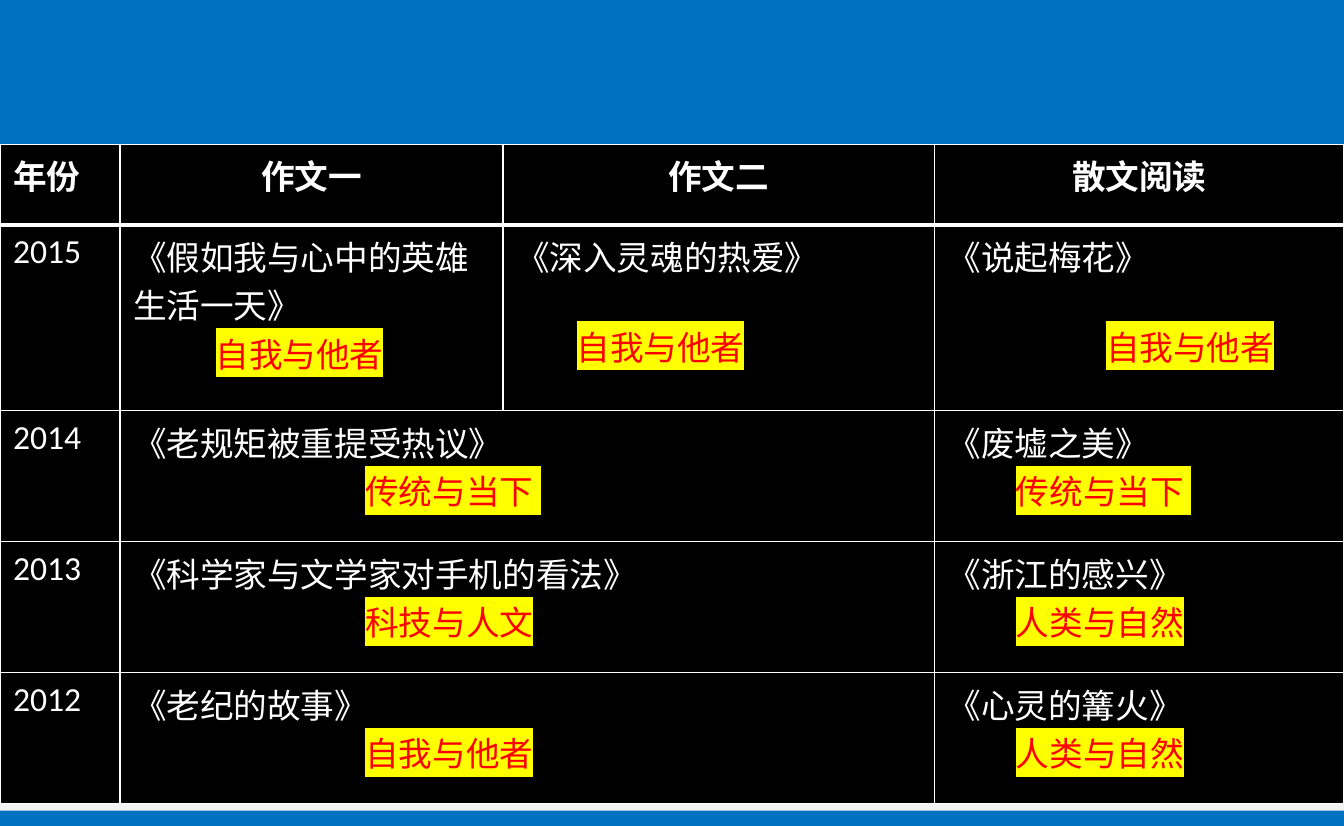
from dataclasses import dataclass

from lxml import etree
from pptx import Presentation
from pptx import util as u
from pptx.dml.color import RGBColor
from pptx.enum import shapes, text
from pptx.oxml.ns import qn

EMU_PER_PX = 9144  # 100 px to the inch
SLIDE_WIDTH, SLIDE_HEIGHT = 1221, 750
CJK, LATIN = "Noto Sans CJK SC", "Calibri"
WHITE, BLACK, RED, YELLOW = "FFFFFF", "000000", "FF0000", "FFFF00"
BLUE, PALE = "0070C0", "F2F2F2"


@dataclass
class Band:
    top: int
    height: int


@dataclass
class Entry:
    title: str
    theme: str
    indent: int
    gap: int = 0  # points above the theme
    span: int = 1


@dataclass
class YearRow:
    year: str
    entries: list[Entry]


BANDS = [Band(0, 131), Band(736, 14)]
TABLE_TOP = 131
COLUMN_WIDTHS = [109, 348, 392, 372]
ROW_HEIGHTS = [73, 169, 119, 119, 119]
HEADINGS = ["年份", "作文一", "作文二", "散文阅读"]
YEAR_ROWS = [
    YearRow("2015", [Entry("《假如我与心中的英雄生活一天》", "自我与他者", 75),
                     Entry("《深入灵魂的热爱》", "自我与他者", 55, gap=27),
                     Entry("《说起梅花》", "自我与他者", 144, gap=27)]),
    YearRow("2014", [Entry("《老规矩被重提受热议》", "传统与当下 ", 211, span=2),
                     Entry("《废墟之美》", "传统与当下 ", 62)]),
    YearRow("2013", [Entry("《科学家与文学家对手机的看法》", "科技与人文", 211, span=2),
                     Entry("《浙江的感兴》", "人类与自然", 62)]),
    YearRow("2012", [Entry("《老纪的故事》", "自我与他者", 211, span=2),
                     Entry("《心灵的篝火》", "人类与自然", 62)]),
]


def px(length: int) -> u.Emu:
    return u.Emu(length * EMU_PER_PX)


def color(value: str) -> RGBColor:
    return RGBColor.from_string(value)


def write(paragraph, content: str, *, font: str = CJK, fill: str = WHITE,
          bold: bool = False, centered: bool = False, indent: int = 0,
          gap: int = 0, highlight: str = "") -> None:
    if centered:
        paragraph.alignment = text.PP_ALIGN.CENTER
    if indent:
        properties = paragraph._p.get_or_add_pPr()
        properties.set("marL", str(px(indent)))
        properties.set("indent", "0")
    if gap:
        paragraph.space_before = u.Pt(gap)
    run = paragraph.add_run()
    run.text = content
    run.font.size = u.Pt(22)
    run.font.bold = bold
    run.font.name = font
    run.font.color.rgb = color(fill)
    properties = run._r.get_or_add_rPr()
    east_asian = etree.Element(qn("a:ea"), typeface=CJK)
    properties.find(qn("a:latin")).addnext(east_asian)
    if highlight:
        mark = etree.Element(qn("a:highlight"))
        etree.SubElement(mark, qn("a:srgbClr"), val=highlight)
        properties.find(qn("a:solidFill")).addnext(mark)


def format_cell(cell, top: int = 1, bottom: int = 1) -> None:
    cell.margin_left = cell.margin_right = px(12)
    cell.margin_top = cell.margin_bottom = px(6)
    cell.fill.solid()
    cell.fill.fore_color.rgb = color(BLACK)
    # Borders come before the fill in the cell properties
    widths = {"a:lnL": 1, "a:lnR": 1, "a:lnT": top, "a:lnB": bottom}
    for position, (side, width) in enumerate(widths.items()):
        line = etree.Element(qn(side), w=str(u.Pt(width)))
        solid = etree.SubElement(line, qn("a:solidFill"))
        etree.SubElement(solid, qn("a:srgbClr"), val=WHITE)
        cell._tc.get_or_add_tcPr().insert(position, line)


def add_band(slide, band: Band) -> None:
    shape = slide.shapes.add_shape(shapes.MSO_SHAPE.RECTANGLE, 0, px(band.top),
                                   px(SLIDE_WIDTH), px(band.height))
    shape.shadow.inherit = False
    shape.fill.solid()
    shape.fill.fore_color.rgb = color(BLUE)
    shape.line.fill.background()


def add_year_row(table, row: int, year_row: YearRow) -> None:
    write(table.cell(row, 0).text_frame.paragraphs[0], year_row.year, font=LATIN)
    column = 1
    for entry in year_row.entries:
        cell = table.cell(row, column)
        if entry.span > 1:
            cell.merge(table.cell(row, column + entry.span - 1))
        write(cell.text_frame.paragraphs[0], entry.title)
        write(cell.text_frame.add_paragraph(), entry.theme, fill=RED,
              highlight=YELLOW, indent=entry.indent, gap=entry.gap)
        column += entry.span


def add_theme_table(slide) -> None:
    table = slide.shapes.add_table(
        len(ROW_HEIGHTS), len(COLUMN_WIDTHS), 0, px(TABLE_TOP),
        px(sum(COLUMN_WIDTHS)), px(sum(ROW_HEIGHTS))).table
    table.horz_banding = False
    for column, width in zip(table.columns, COLUMN_WIDTHS):
        column.width = px(width)
    for index, height in enumerate(ROW_HEIGHTS):
        table.rows[index].height = px(height)
        for cell in table.rows[index].cells:
            format_cell(cell, top=3 if index == 1 else 1,
                        bottom=3 if index == 0 else 1)
    for column, heading in enumerate(HEADINGS):
        write(table.cell(0, column).text_frame.paragraphs[0], heading,
              bold=True, centered=column > 0)
    for row, year_row in enumerate(YEAR_ROWS, start=1):
        add_year_row(table, row, year_row)


def main() -> None:
    presentation = Presentation()
    presentation.slide_width = px(SLIDE_WIDTH)
    presentation.slide_height = px(SLIDE_HEIGHT)
    slide = presentation.slides.add_slide(presentation.slide_layouts[6])
    slide.background.fill.solid()
    slide.background.fill.fore_color.rgb = color(PALE)
    # Blue bands at the top and bottom
    for band in BANDS:
        add_band(slide, band)
    # Essay and reading themes by year
    add_theme_table(slide)
    presentation.save("out.pptx")


if __name__ == "__main__":
    main()
